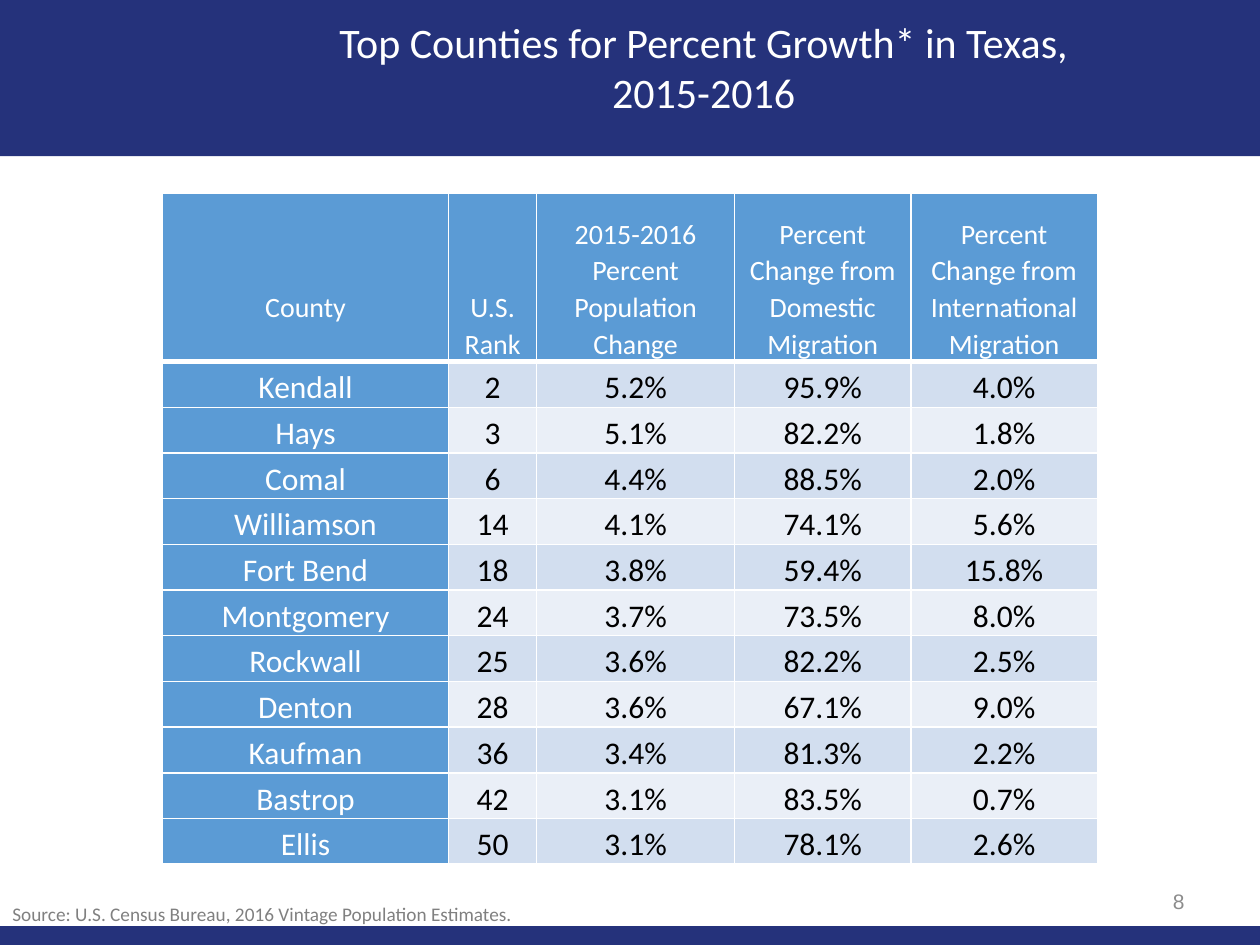
from lxml.etree import SubElement
from pptx import Presentation
from pptx.dml.color import RGBColor
from pptx.enum.shapes import MSO_SHAPE
from pptx.enum.text import MSO_ANCHOR, MSO_AUTO_SIZE, PP_ALIGN
from pptx.oxml.ns import qn
from pptx.util import Inches, Pt

NAVY, BLUE, WHITE, BLACK = "25327B", "5B9BD5", "FFFFFF", "000000"
STRIPES = ("D2DEEF", "EAEFF7")
COLUMN_WIDTHS = (2.27, 0.7, 1.57, 1.4, 1.48)
HEADER_HEIGHT = 1.34
HEADERS = (
    ["County"],
    ["U.S. Rank"],
    ["2015-2016 Percent Population Change"],
    ["Percent Change from Domestic Migration"],
    ["Percent Change from International", "Migration"],
)
COUNTIES = (
    ("Kendall", "2", "5.2%", "95.9%", "4.0%"),
    ("Hays", "3", "5.1%", "82.2%", "1.8%"),
    ("Comal", "6", "4.4%", "88.5%", "2.0%"),
    ("Williamson", "14", "4.1%", "74.1%", "5.6%"),
    ("Fort Bend", "18", "3.8%", "59.4%", "15.8%"),
    ("Montgomery", "24", "3.7%", "73.5%", "8.0%"),
    ("Rockwall", "25", "3.6%", "82.2%", "2.5%"),
    ("Denton", "28", "3.6%", "67.1%", "9.0%"),
    ("Kaufman", "36", "3.4%", "81.3%", "2.2%"),
    ("Bastrop", "42", "3.1%", "83.5%", "0.7%"),
    ("Ellis", "50", "3.1%", "78.1%", "2.6%"),
)


def color(value):
    """Turn a hex string into a colour."""
    return RGBColor.from_string(value)


def write(frame, lines, size, ink, align, font="Calibri", spacing=None):
    """Write each line as one paragraph of the text frame."""
    for index, line in enumerate(lines):
        para = frame.add_paragraph() if index else frame.paragraphs[0]
        para.alignment = align
        para.line_spacing = spacing
        run = para.add_run()
        run.text = line
        run.font.size = Pt(size)
        run.font.name = font
        run.font.color.rgb = color(ink)


def add_band(page, left, top, width, height):
    """Draw a navy band across the box."""
    band = page.shapes.add_shape(MSO_SHAPE.RECTANGLE, *map(Inches, (left, top, width, height)))
    band.shadow.inherit = False
    band.fill.solid()
    band.fill.fore_color.rgb = color(NAVY)
    band.line.fill.background()


def place_title(page, lines, left, top, width, height):
    """Place the title placeholder over the top band."""
    title = page.shapes.title
    title.left, title.top, title.width, title.height = map(Inches, (left, top, width, height))
    page.shapes._spTree.append(title._element)
    frame = title.text_frame
    frame.auto_size = MSO_AUTO_SIZE.NONE
    frame.vertical_anchor = MSO_ANCHOR.TOP
    write(frame, lines, 24, WHITE, PP_ALIGN.CENTER)


def add_note(page, text, left, top, width, height, size, ink, align, font, anchor, wrap):
    """Add one line of small text in the box."""
    note = page.shapes.add_textbox(*map(Inches, (left, top, width, height)))
    frame = note.text_frame
    frame.word_wrap = wrap
    frame.vertical_anchor = anchor
    write(frame, [text], size, ink, align, font)


def style_cell(cell, fill, margins, top_line=1, bottom_line=1):
    """Set the fill, margins and white borders of a cell."""
    cell.vertical_anchor = MSO_ANCHOR.BOTTOM
    cell.margin_left, cell.margin_top, cell.margin_right, cell.margin_bottom = map(Inches, margins)
    properties = cell._tc.get_or_add_tcPr()
    for side, weight in (("lnL", 1), ("lnR", 1), ("lnT", top_line), ("lnB", bottom_line)):
        line = SubElement(properties, qn(f"a:{side}"), w=str(Pt(weight)))
        solid = SubElement(line, qn("a:solidFill"))
        SubElement(solid, qn("a:srgbClr"), val=WHITE)
    cell.fill.solid()
    cell.fill.fore_color.rgb = color(fill)


def add_county_table(page, left, top, width, height):
    """Add the table of counties with its header row."""
    shape = page.shapes.add_table(
        len(COUNTIES) + 1, len(HEADERS), *map(Inches, (left, top, width, height))
    )
    table = shape.table
    for column, column_width in zip(table.columns, COLUMN_WIDTHS):
        column.width = Inches(column_width)
    for row in table.rows:
        row.height = Inches((height - HEADER_HEIGHT) / len(COUNTIES))
    table.rows[0].height = Inches(HEADER_HEIGHT)

    for index, lines in enumerate(HEADERS):
        cell = table.cell(0, index)
        bottom = 0 if index else 0.29
        style_cell(cell, BLUE, (0.07, 0, 0.07, bottom), bottom_line=3)
        write(cell.text_frame, lines, 16, WHITE, PP_ALIGN.CENTER, spacing=1.07)

    for number, county in enumerate(COUNTIES, 1):
        for index, value in enumerate(county):
            cell = table.cell(number, index)
            fill = STRIPES[(number - 1) % 2] if index else BLUE
            margins = (0.01, 0.01, 0.01, 0) if index < 3 else (0, 0, 0, 0)
            style_cell(cell, fill, margins, top_line=3 if number == 1 else 1)
            write(cell.text_frame, [value], 18, BLACK if index else WHITE, PP_ALIGN.CENTER)


def main():
    """Build the slide and save the deck."""
    deck = Presentation()
    deck.slide_width, deck.slide_height = Inches(10), Inches(7.5)
    page = deck.slides.add_slide(deck.slide_layouts[5])
    add_band(page, 0, 0, 10, 1.24)
    add_band(page, 0, 7.35, 10, 0.15)
    place_title(
        page, ["Top Counties for Percent Growth* in Texas,", "2015-2016"], 1.92, 0.08, 7.33, 0.91
    )
    add_note(page, "8", 7.17, 6.95, 2.33, 0.4, 12, "8C8C8C",
             PP_ALIGN.RIGHT, "Arial", MSO_ANCHOR.MIDDLE, True)
    add_note(page, "Source: U.S. Census Bureau, 2016 Vintage Population Estimates.",
             0, 7.11, 4.24, 0.29, 11, "808080",
             PP_ALIGN.LEFT, "Calibri", MSO_ANCHOR.TOP, False)
    add_county_table(page, 1.29, 1.53, 7.42, 5.33)
    deck.save("out.pptx")


if __name__ == "__main__":
    main()
